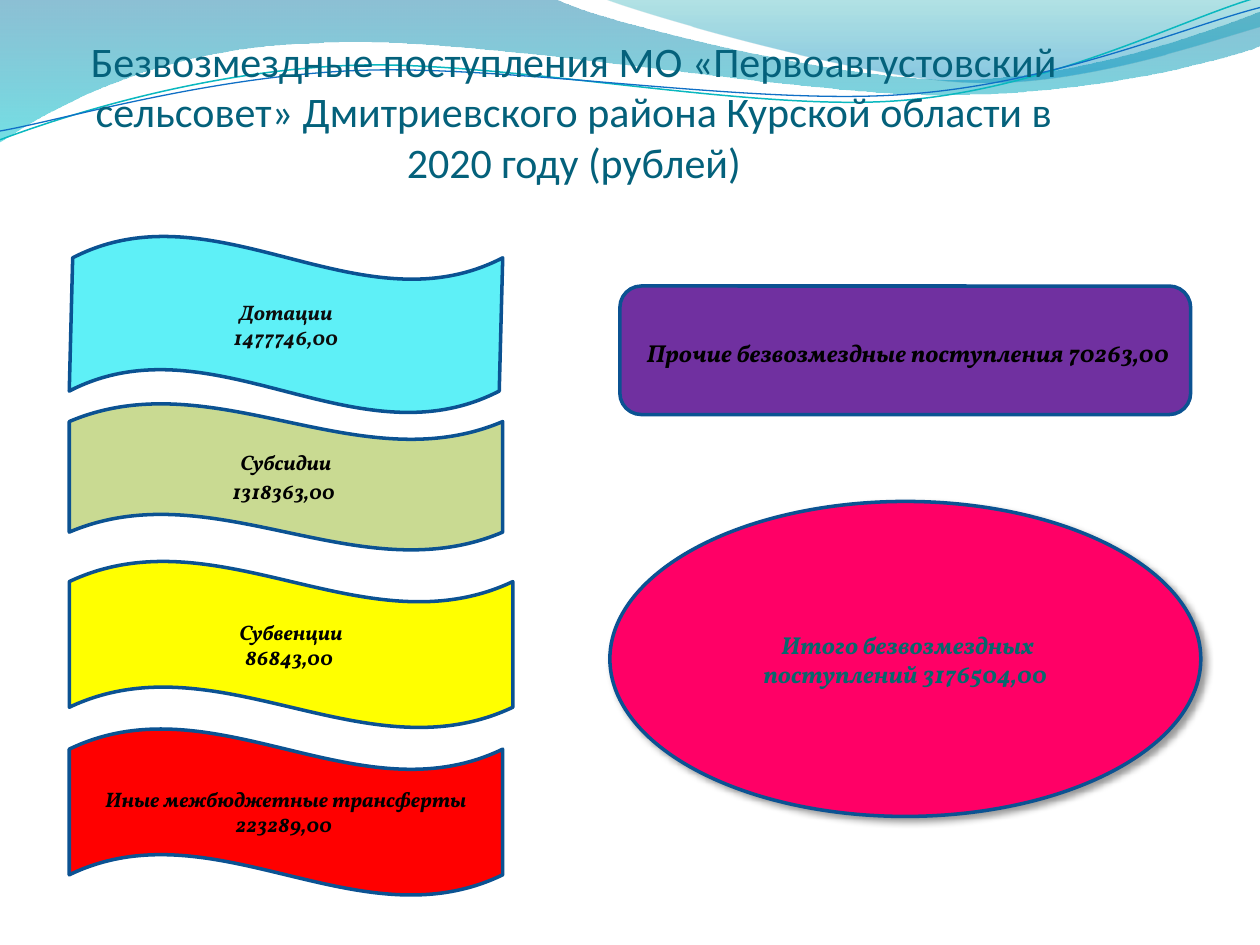
from pptx import Presentation
from pptx.dml.color import RGBColor
from pptx.enum.shapes import MSO_SHAPE
from pptx.enum.text import MSO_ANCHOR, PP_ALIGN
from pptx.oxml.ns import qn
from pptx.util import Inches, Pt
from lxml.etree import SubElement

COLORS = {
    "background": "FFFFFF", "title": "04617B", "outline": "0B5292", "text": "000000",
    "grants": "5EF0F7", "grants_text": "0D0D0D", "subsidies": "C9DA92",
    "subventions": "FFFF00", "transfers": "FF0000", "other": "7030A0",
    "total": "FF0066", "total_text": "06686C", "teal_line": "0AB8BF", "blue_line": "0F6FC6",
    "wave_top": "0074A1", "wave_bottom": "00C6CF", "crest_top": "00A1A9", "crest_bottom": "008BBF",
}
BODY_FONT = "Vollkorn"

WAVE = [(0, 0), (4.4, -0.01), (4.76, 0.17, 6.64, 0.63, 7.58, 0.63),
        (8.53, 0.63, 9.58, 0.26, 10, 0.09), (10.01, 0.36),
        (9.83, 0.44, 8.7, 0.76, 7.46, 0.75), (6.22, 0.75, 3.82, 0.28, 2.57, 0.34),
        (1.29, 0.36, 0.46, 0.83, -0.01, 1.13), (0, 0)]
CREST = [(4.79, -0.01), (5.09, 0.11, 6.82, 0.62, 7.69, 0.65),
         (8.56, 0.69, 9.61, 0.32, 10, 0.21), (10, 0), (4.79, -0.01)]
TEAL_CURVE = [(0, 1.11), (0.48, 0.93, 1.58, 0.57, 2.77, 0.52),
              (3.95, 0.47, 5.93, 0.89, 7.13, 0.8), (8.33, 0.71, 9.38, 0.15, 9.98, -0.02)]
BLUE_CURVE = [(0, 1.04), (0.47, 0.96, 1.64, 0.61, 2.83, 0.56),
              (4.03, 0.51, 5.97, 0.84, 7.17, 0.75), (8.36, 0.67, 9.41, 0.21, 10, 0.06)]


def rgb(name):
    """Return the named palette colour."""
    return RGBColor.from_string(COLORS[name])


def add_curve(slide, segments, closed):
    """Add a freeform of points and cubic segments."""
    points = [(Inches(segment[i]), Inches(segment[i + 1]))
              for segment in segments for i in range(0, len(segment), 2)]
    builder = slide.shapes.build_freeform(*points[0])
    builder.add_line_segments(points[1:], close=closed)
    curve = builder.convert_to_shape()
    curve.shadow.inherit = False
    outline = next(curve._element.spPr.iter(qn("a:path")))
    steps = iter(outline.findall(qn("a:lnTo")))
    for segment in segments[1:]:
        step = next(steps)
        if len(segment) == 6:
            bend = outline.makeelement(qn("a:cubicBezTo"))
            step.addprevious(bend)
            for part in (step, next(steps), next(steps)):
                bend.append(part[0])
                outline.remove(part)
    return curve


def add_ribbon(slide, segments, stops):
    """Add a translucent ribbon shaded from top to bottom."""
    ribbon = add_curve(slide, segments, True)
    ribbon.line.fill.background()
    ribbon.fill.gradient()
    ribbon.fill.gradient_angle = 270
    for stop, (position, color, opacity) in zip(ribbon.fill.gradient_stops, stops):
        stop.position = position
        stop.color.rgb = rgb(color)
    for tint, (_, _, opacity) in zip(ribbon._element.spPr.iter(qn("a:srgbClr")), stops):
        SubElement(tint, qn("a:alpha"), val=str(opacity * 1000))


def add_header_waves(slide):
    """Draw the ribbons and thin curves along the top edge."""
    add_ribbon(slide, WAVE, [(0, "wave_top", 45), (1, "wave_bottom", 55)])
    add_ribbon(slide, CREST, [(0, "crest_top", 30), (0.8, "crest_bottom", 45)])
    for segments, color, width in ((TEAL_CURVE, "teal_line", 0.85), (BLUE_CURVE, "blue_line", 0.75)):
        curve = add_curve(slide, segments, False)
        curve.fill.background()
        curve.line.color.rgb = rgb(color)
        curve.line.width = Pt(width)


def add_title(slide, text, left, top, width, height):
    """Place and format the title above the header waves."""
    title = slide.shapes.title
    slide.shapes._spTree.append(title._element)
    title.left, title.top, title.width, title.height = map(Inches, (left, top, width, height))
    frame = title.text_frame
    frame.text = text
    frame.word_wrap = True
    frame.vertical_anchor = MSO_ANCHOR.BOTTOM
    frame.margin_left = frame.margin_right = frame.margin_bottom = 0
    frame.margin_top = Inches(0.05)
    frame.paragraphs[0].alignment = PP_ALIGN.CENTER
    font = frame.paragraphs[0].runs[0].font
    font.name, font.size, font.color.rgb = "Calibri", Pt(24), rgb("title")


def add_figure(slide, kind, box, fill, lines, text_color="text"):
    """Add an outlined figure; each line is a list of (text, size) runs."""
    figure = slide.shapes.add_shape(kind, *map(Inches, box))
    figure.shadow.inherit = False
    figure.fill.solid()
    figure.fill.fore_color.rgb = rgb(fill)
    figure.line.color.rgb = rgb("outline")
    figure.line.width = Pt(2)
    frame = figure.text_frame
    frame.word_wrap = True
    frame.vertical_anchor = MSO_ANCHOR.MIDDLE
    for index, line in enumerate(lines):
        paragraph = frame.add_paragraph() if index else frame.paragraphs[0]
        paragraph.alignment = PP_ALIGN.CENTER
        for text, size in line:
            run = paragraph.add_run()
            run.text = text
            font = run.font
            font.name, font.size, font.color.rgb = BODY_FONT, Pt(size), rgb(text_color)
            font.bold = font.italic = True
    return figure


def add_receipts(slide, left, width):
    """Stack the waving flags of the four kinds of receipts."""
    receipts = [
        (1.87, 1.41, 0, -0.004, "grants", "grants_text", "Дотации", [("1477746,00", 12)]),
        (3.2, 1.17, 0, 0, "subsidies", "text", "Субсидии", [("1318363,00", 12), (" ", 14)]),
        (4.45, 1.33, 0.08, 0, "subventions", "text", "Субвенции", [("86843,00 ", 12)]),
        (5.78, 1.33, 0, 0, "transfers", "text", "Иные межбюджетные трансферты",
         [("223289,00 ", 12)]),
    ]
    for top, height, extra, skew, fill, text_color, label, amount in receipts:
        flag = add_figure(slide, MSO_SHAPE.WAVE, (left, top, width + extra, height), fill,
                          [[(label, 12)], amount], text_color)
        flag.adjustments[0] = 0.125
        flag.adjustments[1] = skew


def add_total(slide, box):
    """Add the shadowed ellipse with the total."""
    total = add_figure(slide, MSO_SHAPE.OVAL, box, "total",
                       [[(" Итого безвозмездных поступлений 3176504,00", 14)]], "total_text")
    effects = total._element.spPr.find(qn("a:effectLst"))
    shadow = SubElement(effects, qn("a:outerShdw"), blurRad=str(Pt(4)), dist=str(Pt(3)),
                        dir="2700000", algn="tl", rotWithShape="0")
    tint = SubElement(shadow, qn("a:srgbClr"), val=COLORS["text"])
    SubElement(tint, qn("a:alpha"), val="40000")


def main():
    """Build and save the slide."""
    deck = Presentation()
    deck.slide_width, deck.slide_height = Inches(10), Inches(7.5)
    slide = deck.slides.add_slide(deck.slide_layouts[5])
    slide.background.fill.solid()
    slide.background.fill.fore_color.rgb = rgb("background")
    add_header_waves(slide)
    add_title(slide, "Безвозмездные поступления МО «Первоавгустовский сельсовет» "
              "Дмитриевского района Курской области в 2020 году (рублей)", 0.47, 0.23, 8.17, 1.25)
    add_figure(slide, MSO_SHAPE.FLOWCHART_ALTERNATE_PROCESS, (4.92, 2.27, 4.53, 1.02), "other",
               [[(" ", 18), ("Прочие безвозмездные поступления 70263,00", 14)]])
    add_receipts(slide, 0.55, 3.44)
    add_total(slide, (4.84, 3.98, 4.69, 2.5))
    deck.save("out.pptx")


if __name__ == "__main__":
    main()
